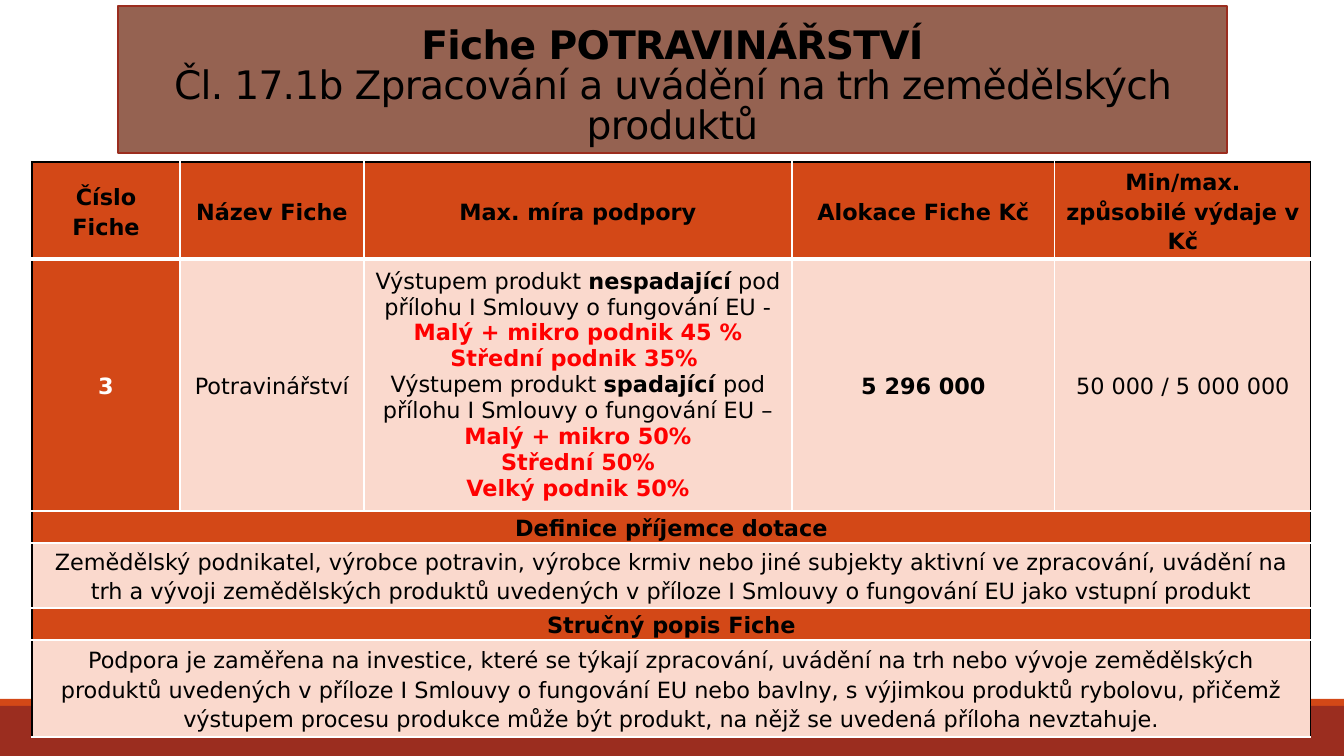
from lxml import etree
from pptx import Presentation
from pptx.dml.color import RGBColor
from pptx.enum.shapes import MSO_SHAPE
from pptx.enum.text import MSO_ANCHOR, MSO_AUTO_SIZE, PP_ALIGN
from pptx.oxml.ns import qn
from pptx.util import Pt

PX = 914400 / 100.8
SLIDE_WIDTH, SLIDE_HEIGHT = 1344, 756
TITLE_ONLY = 5
FONT = "DejaVu Sans"
CENTER = PP_ALIGN.CENTER
MIDDLE, BOTTOM = MSO_ANCHOR.MIDDLE, MSO_ANCHOR.BOTTOM
NO_AUTOFIT = MSO_AUTO_SIZE.NONE
RECTANGLE = MSO_SHAPE.RECTANGLE

BLACK = RGBColor(0x00, 0x00, 0x00)
WHITE = RGBColor(0xFF, 0xFF, 0xFF)
RED = RGBColor(0xFF, 0x00, 0x00)
ORANGE = RGBColor(0xD3, 0x48, 0x17)
BRICK = RGBColor(0x9B, 0x2D, 0x1F)
BROWN = RGBColor(0x95, 0x62, 0x51)
PEACH = RGBColor(0xFA, 0xD9, 0xCD)

COLUMN_WIDTHS = [148, 184, 428, 263, 256]
ROW_HEIGHTS = [97, 252, 32, 65, 32, 97]
LAST_COLUMN = len(COLUMN_WIDTHS) - 1
HEADERS = ["Číslo Fiche", "Název Fiche", "Max. míra podpory", "Alokace Fiche Kč",
           "Min/max. způsobilé výdaje v Kč"]
SUPPORT_RATES = [
    [("Výstupem produkt ", BLACK, False), ("nespadající", BLACK, True),
     (" pod přílohu I Smlouvy o fungování EU - ", BLACK, False),
     ("Malý + mikro podnik 45 %", RED, True)],
    [("Střední podnik 35% ", RED, True)],
    [("Výstupem produkt ", BLACK, False), ("spadající ", BLACK, True),
     ("pod přílohu I Smlouvy o fungování EU –", BLACK, False)],
    [("Malý + mikro 50%", RED, True)],
    [("Střední 50%", RED, True)],
    [("Velký podnik 50%", RED, True)],
]
SECTIONS = [
    ("Definice příjemce dotace", True),
    ("Zemědělský podnikatel, výrobce potravin, výrobce krmiv nebo jiné subjekty aktivní ve "
     "zpracování, uvádění na trh a vývoji zemědělských produktů uvedených v příloze I Smlouvy "
     "o fungování EU jako vstupní produkt", False),
    ("Stručný popis Fiche", True),
    ("Podpora je zaměřena na investice, které se týkají zpracování, uvádění na trh nebo vývoje "
     "zemědělských produktů uvedených v příloze I Smlouvy o fungování EU nebo bavlny, "
     "s výjimkou produktů rybolovu, přičemž výstupem procesu produkce může být produkt, "
     "na nějž se uvedená příloha nevztahuje.", False),
]


def px(length):
    """Turn pixels into EMU."""
    return round(length * PX)


def format_run(run, size, color, bold):
    """Set the font of one run."""
    run.font.name = FONT
    run.font.size = Pt(size)
    run.font.color.rgb = color
    run.font.bold = bold


def add_footer(slide, left, top, width, height):
    """Draw the footer band with its thin stripe on top."""
    stripe = 7
    for offset, band_height, color in ((0, stripe, ORANGE), (stripe, height - stripe, BRICK)):
        band = slide.shapes.add_shape(RECTANGLE, px(left), px(top + offset),
                                      px(width), px(band_height))
        band.shadow.inherit = False
        band.fill.solid()
        band.fill.fore_color.rgb = color
        band.line.fill.background()


def place_title(slide, left, top, width, height):
    """Move, fill and format the title placeholder."""
    title = slide.shapes.title
    title.left, title.top, title.width, title.height = map(px, (left, top, width, height))
    title.fill.solid()
    title.fill.fore_color.rgb = BROWN
    title.line.color.rgb = BRICK
    title.line.width = Pt(1.25)
    frame = title.text_frame
    frame.text = "Fiche POTRAVINÁŘSTVÍ\vČl. 17.1b Zpracování a uvádění na trh zemědělských produktů"
    frame.word_wrap = True
    frame.auto_size = NO_AUTOFIT
    frame.vertical_anchor = BOTTOM
    paragraph = frame.paragraphs[0]
    paragraph.alignment = CENTER
    paragraph.line_spacing = 0.85
    for run, bold in zip(paragraph.runs, (True, False)):
        format_run(run, 28, BLACK, bold)
        run.font._element.set("spc", "-50")
    line_break = paragraph._p.find(qn("a:br"))
    etree.SubElement(line_break, qn("a:rPr"), sz="2800")


def set_borders(cell, left, right, top, bottom, bottom_width=1):
    """Give a cell its four border lines."""
    properties = cell._tc.get_or_add_tcPr()
    for tag, color, width in (("a:lnL", left, 1), ("a:lnR", right, 1),
                              ("a:lnT", top, 1), ("a:lnB", bottom, bottom_width)):
        line = etree.SubElement(properties, qn(tag), w=str(Pt(width)))
        fill = etree.SubElement(line, qn("a:solidFill"))
        etree.SubElement(fill, qn("a:srgbClr"), val=str(color))


def style_cell(cell, row, column, fill, merged=False):
    """Set the borders, fill, margins and anchor of a cell."""
    set_borders(cell,
                left=BLACK if column == 0 else WHITE,
                right=BLACK if merged or column == LAST_COLUMN else WHITE,
                top=BLACK if row == 0 else WHITE,
                bottom=WHITE,
                bottom_width=3 if row == 0 else 1)
    cell.fill.solid()
    cell.fill.fore_color.rgb = fill
    cell.margin_left = cell.margin_right = px(7)
    cell.margin_top = cell.margin_bottom = 0
    cell.vertical_anchor = MIDDLE


def write_cell(cell, paragraphs, spacing=1.15):
    """Write paragraphs, each a list of (text, color, bold) runs."""
    frame = cell.text_frame
    for index, runs in enumerate(paragraphs):
        paragraph = frame.add_paragraph() if index else frame.paragraphs[0]
        paragraph.alignment = CENTER
        paragraph.line_spacing = spacing
        for text, color, bold in runs:
            run = paragraph.add_run()
            run.text = text
            format_run(run, 16, color, bold)


def add_fiche_table(slide, left, top):
    """Build the table of the fiche."""
    frame = slide.shapes.add_table(len(ROW_HEIGHTS), len(COLUMN_WIDTHS), px(left), px(top),
                                   px(sum(COLUMN_WIDTHS)), px(sum(ROW_HEIGHTS)))
    table = frame.table
    table.first_row = table.horz_banding = False
    for column, width in zip(table.columns, COLUMN_WIDTHS):
        column.width = px(width)
    for row, height in zip(table.rows, ROW_HEIGHTS):
        row.height = px(height)

    values = [[[("3", WHITE, True)]], [[("Potravinářství", BLACK, False)]], SUPPORT_RATES,
              [[("5 296 000", BLACK, True)]], [[("50 000 / 5 000 000", BLACK, False)]]]
    for column, (header, value) in enumerate(zip(HEADERS, values)):
        header_cell, value_cell = table.cell(0, column), table.cell(1, column)
        style_cell(header_cell, 0, column, ORANGE)
        write_cell(header_cell, [[(header, BLACK, True)]])
        style_cell(value_cell, 1, column, PEACH if column else ORANGE)
        write_cell(value_cell, value, 1.0 if value is SUPPORT_RATES else 1.15)

    for row, (text, heading) in enumerate(SECTIONS, start=2):
        table.cell(row, 0).merge(table.cell(row, LAST_COLUMN))
        for column in (0, LAST_COLUMN):
            style_cell(table.cell(row, column), row, column,
                       ORANGE if heading else PEACH, merged=True)
        write_cell(table.cell(row, 0), [[(text, BLACK, heading)]])


def main():
    """Build and save the presentation."""
    presentation = Presentation()
    presentation.slide_width = px(SLIDE_WIDTH)
    presentation.slide_height = px(SLIDE_HEIGHT)
    slide = presentation.slides.add_slide(presentation.slide_layouts[TITLE_ONLY])
    add_footer(slide, 0, 699, SLIDE_WIDTH, 57)
    place_title(slide, 118, 6, 1109, 147)
    add_fiche_table(slide, 32, 162)
    presentation.save("out.pptx")


if __name__ == "__main__":
    main()
